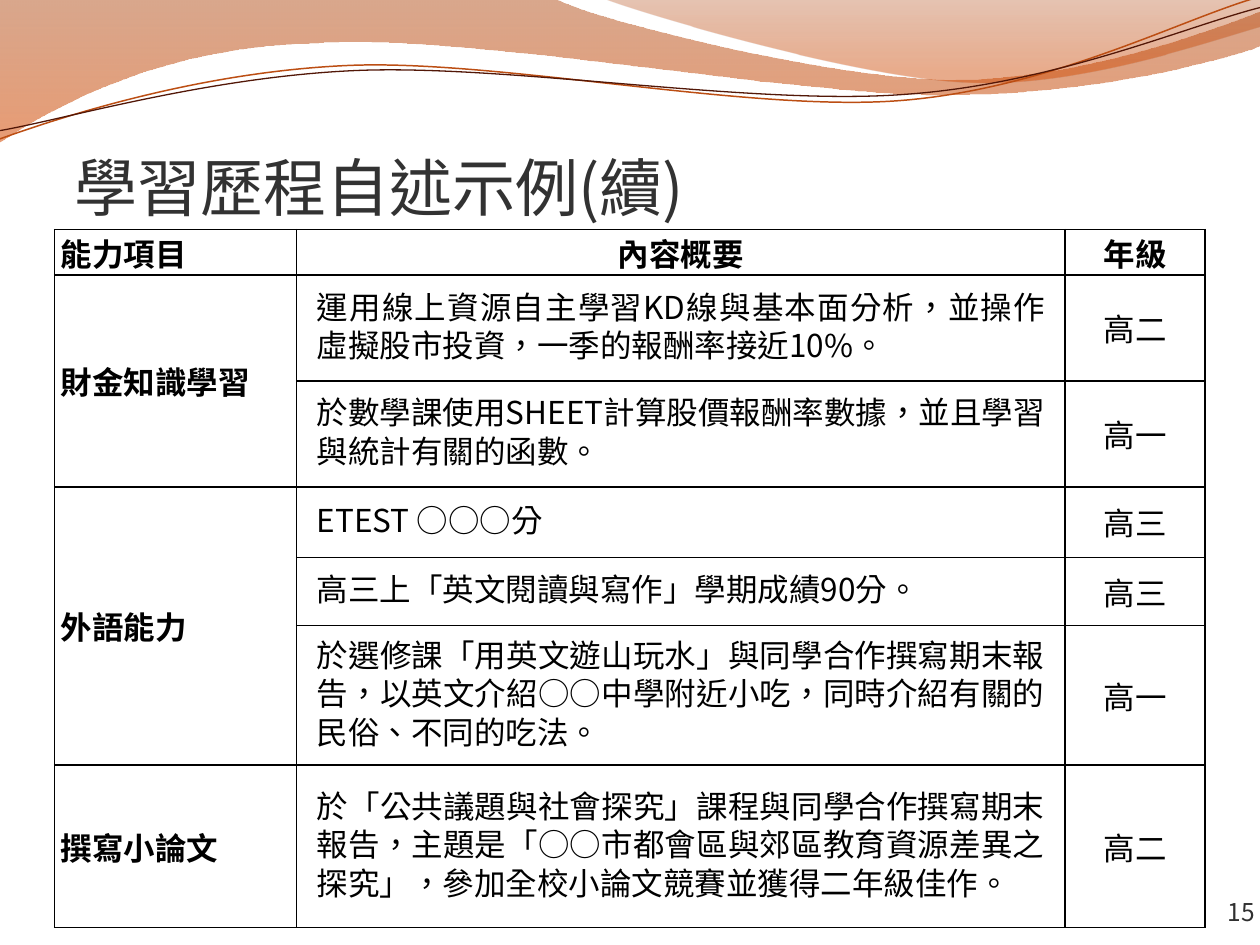
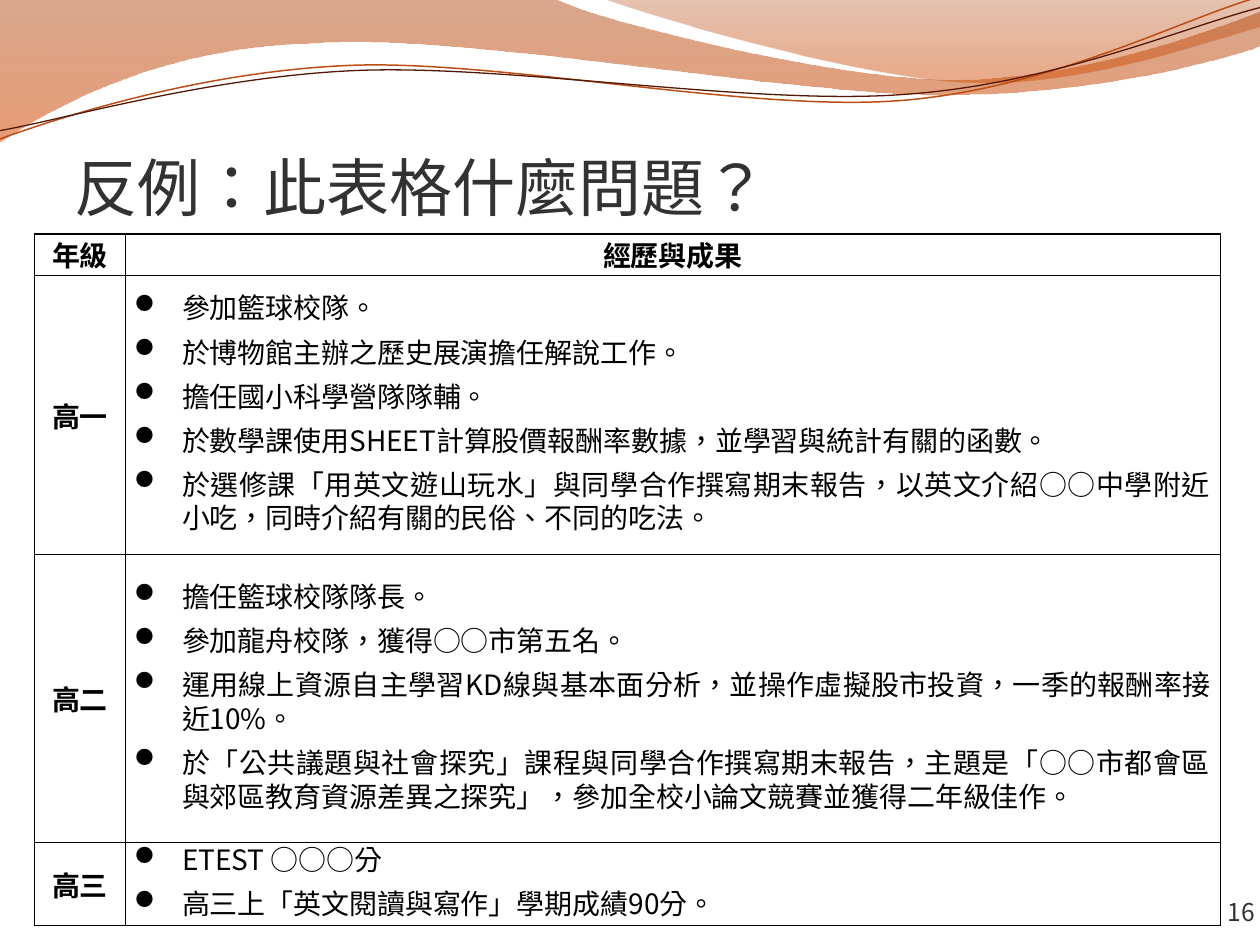
"""Build two slides on learning-history tables under a shared wave header."""
from dataclasses import dataclass

from lxml import etree
from pptx import Presentation
from pptx.dml.color import RGBColor
from pptx.enum.text import MSO_ANCHOR, MSO_AUTO_SIZE, PP_ALIGN
from pptx.oxml.ns import qn
from pptx.util import Inches, Pt

LEFT, CENTER, RIGHT, JUSTIFY = PP_ALIGN.LEFT, PP_ALIGN.CENTER, PP_ALIGN.RIGHT, PP_ALIGN.JUSTIFY
MIDDLE, BOTTOM, NO_FIT = MSO_ANCHOR.MIDDLE, MSO_ANCHOR.BOTTOM, MSO_AUTO_SIZE.NONE


@dataclass(frozen=True)
class Theme:
    font: str = "Noto Sans CJK SC"
    language: str = "zh-TW"
    title: str = "323232"
    number: str = "303030"
    ink: str = "000000"
    title_size: int = 36
    number_size: int = 14


T = Theme()
prs = Presentation()
prs.slide_width, prs.slide_height = Inches(10), Inches(7.5)
U = prs.slide_width // 100

WAVES = [
    dict(start=(0, 0), parts=[
        (44, -0.1), (47.6, 1.7, 66.4, 6.3, 75.8, 6.3), (85.3, 6.3, 95.8, 2.6, 100, 0.9),
        (100.1, 3.6), (98.3, 4.4, 87, 7.6, 74.6, 7.5), (62.2, 7.5, 38.2, 2.8, 25.7, 3.4),
        (12.9, 3.6, 4.6, 8.3, -0.1, 11.3)],
        stops=[(0, "AC3D02", 45), (1, "D54A00", 55)]),
    dict(start=(47.9, -0.1), parts=[
        (50.9, 1.1, 68.2, 6.2, 76.9, 6.5), (85.6, 6.9, 96.1, 3.2, 100, 2.1), (100, 0)],
        stops=[(0, "AE3C00", 30), (0.8, "CF4800", 45)]),
    dict(start=(-0.2, 11.1), parts=[
        (4.8, 9.3, 15.8, 5.7, 27.7, 5.2), (39.5, 4.7, 59.3, 8.9, 71.3, 8),
        (83.3, 7.1, 93.8, 1.5, 99.8, -0.2)], line=("BC4E13", 0.85)),
    dict(start=(-0.2, 10.4), parts=[
        (4.7, 9.6, 16.4, 6.1, 28.3, 5.6), (40.3, 5.1, 59.7, 8.4, 71.7, 7.5),
        (83.6, 6.7, 94.1, 2.1, 100, 0.6)], line=("521707", 0.75)),
]

STOCKS = "運用線上資源自主學習KD線與基本面分析，並操作虛擬股市投資，一季的報酬率接近10%。"
FOOD = "於選修課「用英文遊山玩水」與同學合作撰寫期末報告，以英文介紹○○中學附近小吃，同時介紹有關的民俗、不同的吃法。"
PAPER = ("於「公共議題與社會探究」課程與同學合作撰寫期末報告，主題是「○○市都會區與郊區教育資源差異之探究」，"
         "參加全校小論文競賽並獲得二年級佳作。")
SCORE = "ETEST ○○○分"
GRADE = "高三上「英文閱讀與寫作」學期成績90分。"

SLIDES = [
    dict(title="學習歷程自述示例(續)", number="15", at=(4.34, 18.22), size=18,
         cols=[19.2, 61, 11.1], rows=[3.2, 8.4, 8.4, 5.6, 5.4, 11.1, 12.9],
         lead=JUSTIFY, inset=0.5, body_inset=1.6, leading=22, after=6, hang=0,
         merges=[(1, 2), (3, 5)],
         cells=[["能力項目", "內容概要", "年級"],
                ["財金知識學習", STOCKS, "高二"],
                ["", "於數學課使用SHEET計算股價報酬率數據，並且學習與統計有關的函數。", "高一"],
                ["外語能力", SCORE, "高三"],
                ["", GRADE, "高三"],
                ["", FOOD, "高一"],
                ["撰寫小論文", PAPER, "高二"]]),
    dict(title="反例：此表格什麼問題？", number="16", at=(2.75, 18.57), size=16,
         cols=[7.2, 86.9], rows=[3.3, 22.15, 22.85, 6.6],
         lead=CENTER, inset=0.7, body_inset=0.7, leading=19.2, after=0, hang=3.8,
         merges=[],
         cells=[["年級", "經歷與成果"],
                ["高一", "\n".join([
                    "參加籃球校隊。", "於博物館主辦之歷史展演擔任解說工作。", "擔任國小科學營隊隊輔。",
                    "於數學課使用SHEET計算股價報酬率數據，並學習與統計有關的函數。", FOOD])],
                ["高二", "\n".join([
                    "擔任籃球校隊隊長。", "參加龍舟校隊，獲得○○市第五名。", STOCKS, PAPER])],
                ["高三", "\n".join([SCORE, GRADE])]]),
]


def draw_wave(shapes, start, parts, closed):
    """Draw an outline of straight parts (x, y) and cubic parts (six numbers)."""
    points = [(int(q[i] * U), int(q[i + 1] * U))
              for q in [start, *parts] for i in range(0, len(q), 2)]
    fb = shapes.build_freeform(*points[0])
    fb.add_line_segments(points[1:], close=closed)
    sp = fb.convert_to_shape()
    segments = iter(list(sp._element.iter(qn("a:lnTo"))))
    for part in parts:
        first = next(segments)
        if len(part) == 6:
            first.tag = qn("a:cubicBezTo")
            for extra in (next(segments), next(segments)):
                first.append(extra[0])
                extra.getparent().remove(extra)
    return sp


def write(p, text, size, color, align, bold=False):
    """Add one formatted run to a paragraph."""
    p.alignment = align
    r = p.add_run()
    r.text = text
    r.font.size, r.font.bold, r.font.name = Pt(size), bold, T.font
    r.font.color.rgb = RGBColor.from_string(color)
    r.font._element.set("lang", T.language)
    etree.SubElement(r.font._element, qn("a:ea"), typeface=T.font)


layout = prs.slide_layouts[5]
slides = [prs.slides.add_slide(layout) for _ in SLIDES]

for wave in WAVES:
    sp = draw_wave(slides[0].shapes, wave["start"], wave["parts"], "stops" in wave)
    sp.shadow.inherit = False
    if "line" in wave:
        color, width = wave["line"]
        sp.fill.background()
        sp.line.color.rgb = RGBColor.from_string(color)
        sp.line.width = Pt(width)
    else:
        sp.line.fill.background()
        sp.fill.gradient()
        sp.fill.gradient_angle = 270
        for stop, (position, color, _) in zip(sp.fill.gradient_stops, wave["stops"]):
            stop.position = position
            stop.color.rgb = RGBColor.from_string(color)
        for clr, (_, _, opacity) in zip(sp._element.iter(qn("a:srgbClr")), wave["stops"]):
            etree.SubElement(clr, qn("a:alpha"), val=str(opacity * 1000))
    layout.shapes._spTree.append(sp._element)

for s, data in zip(slides, SLIDES):
    number = s.shapes.add_textbox(0, 0, U, U)
    for sp, box, text, size, color, align, top in [
            (s.shapes.title, (5.9, 9.9, 94.1, 7.9), data["title"], T.title_size, T.title, LEFT, 0.5),
            (number, (86.7, 69.5, 12.9, 4), data["number"], T.number_size, T.number, RIGHT, 0)]:
        sp.left, sp.top, sp.width, sp.height = (int(v * U) for v in box)
        tf = sp.text_frame
        tf.word_wrap, tf.auto_size, tf.vertical_anchor = True, NO_FIT, BOTTOM
        tf.margin_left = tf.margin_right = tf.margin_bottom = 0
        tf.margin_top = int(top * U)
        write(tf.paragraphs[0], text, size, color, align)

    cols, rows = data["cols"], data["rows"]
    box = (*data["at"], sum(cols), sum(rows))
    table = s.shapes.add_table(len(rows), len(cols), *(int(v * U) for v in box)).table
    table.first_row = table.horz_banding = False
    for column, width in zip(table.columns, cols):
        column.width = int(width * U)
    for row, height in zip(table.rows, rows):
        row.height = int(height * U)
    for first, last in data["merges"]:
        table.cell(first, 0).merge(table.cell(last, 0))

    for i, texts in enumerate(data["cells"]):
        for j, text in enumerate(texts):
            cell = table.cell(i, j)
            body = i > 0 and j == 1
            cell.vertical_anchor = MIDDLE
            cell.margin_top = cell.margin_bottom = 0
            cell.margin_left = cell.margin_right = int(data["body_inset" if body else "inset"] * U)
            tcPr = cell._tc.get_or_add_tcPr()
            for side in ("lnL", "lnR", "lnT", "lnB"):
                ln = etree.SubElement(tcPr, qn(f"a:{side}"), w=str(Pt(1)))
                fill = etree.SubElement(ln, qn("a:solidFill"))
                etree.SubElement(fill, qn("a:srgbClr"), val=T.ink)
            cell.fill.background()
            if not text:
                continue
            align = JUSTIFY if body else data["lead"] if j == 0 else CENTER
            tf = cell.text_frame
            for k, line in enumerate(text.split("\n")):
                p = tf.add_paragraph() if k else tf.paragraphs[0]
                write(p, line, data["size"], T.ink, align, bold=i == 0 or j == 0)
                if not body:
                    continue
                p.line_spacing = Pt(data["leading"])
                p.space_before, p.space_after = Pt(6), Pt(data["after"])
                if data["hang"]:
                    hang = int(data["hang"] * U)
                    pPr = p._p.get_or_add_pPr()
                    pPr.set("marL", str(hang))
                    pPr.set("indent", str(-hang))
                    etree.SubElement(pPr, qn("a:buFont"), typeface="Wingdings", charset="2")
                    etree.SubElement(pPr, qn("a:buChar"), char="l")

prs.save("out.pptx")
